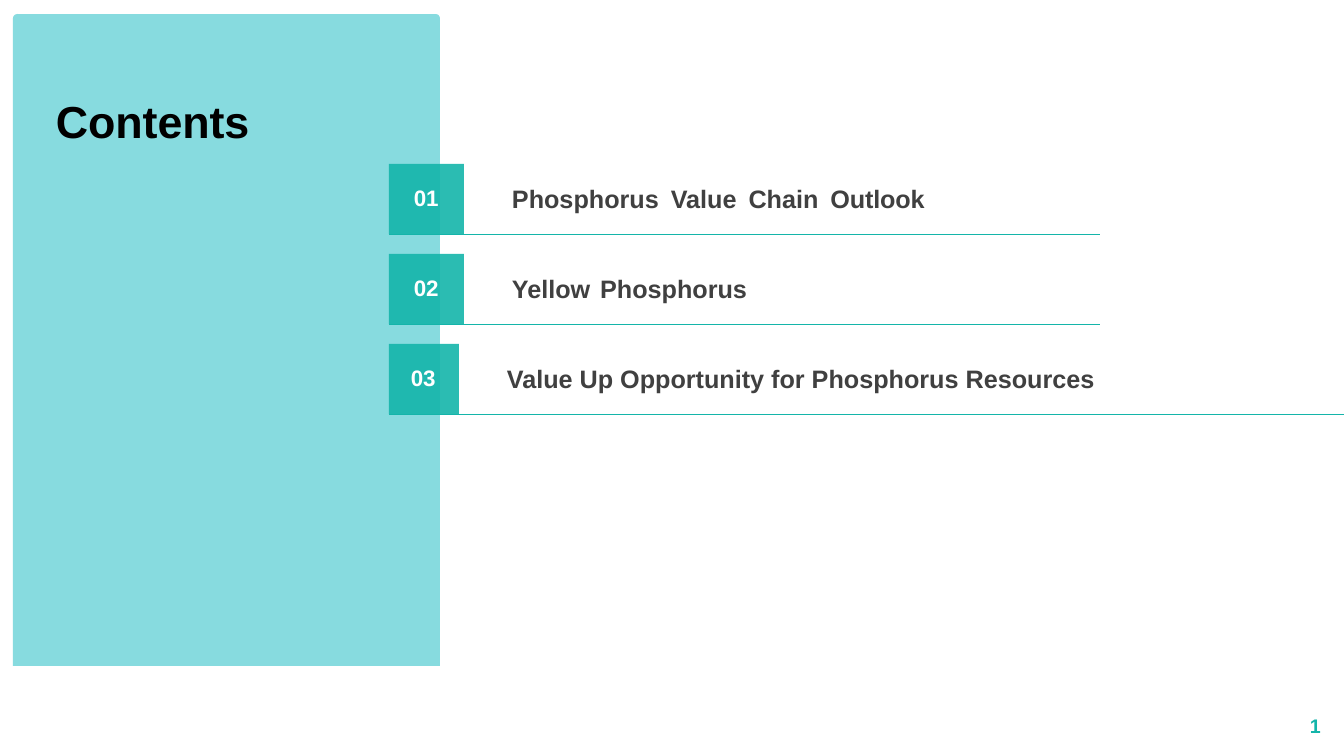
from lxml import etree
from pptx import Presentation
from pptx import util as u
from pptx.dml.color import RGBColor
from pptx.enum import shapes, text
from pptx.oxml.ns import qn

PX = 914400 / 100.8
TEAL = "14B5AA"


def color(value):
    return RGBColor.from_string(value)


def add_text(left, top, width, height, runs, size, fill, inset=1, indent=1):
    """Add a bold one-line text box; runs are (wording, letter spacing) pairs."""
    box = page.shapes.add_textbox(*(round(v * PX) for v in (left, top, width, height)))
    frame = box.text_frame
    frame.word_wrap = True
    frame.auto_size = text.MSO_AUTO_SIZE.SHAPE_TO_FIT_TEXT
    frame.margin_left = frame.margin_right = frame.margin_bottom = 0
    frame.margin_top = round(inset * PX)
    para = frame.paragraphs[0]
    para._p.get_or_add_pPr().set("marL", str(round(indent * PX)))
    for wording, spacing in runs:
        span = para.add_run()
        span.text = wording
        span.font.name = "Arial"
        span.font.size = u.Pt(size)
        span.font.bold = True
        span.font.color.rgb = color(fill)
        span._r.get_or_add_rPr().set("spc", str(spacing))
    return para


deck = Presentation()
deck.slide_width, deck.slide_height = round(1344 * PX), round(756 * PX)
page = deck.slides.add_slide(deck.slide_layouts[6])

# Side panel with rounded top corners
panel = page.shapes.add_shape(
    shapes.MSO_SHAPE.ROUND_2_SAME_RECTANGLE,
    *(round(v * PX) for v in (13, 14, 427, 652)))
panel.adjustments[0] = 0.01
panel.shadow.inherit = False
panel.fill.solid()
panel.fill.fore_color.rgb = color("87DBDF")
panel.line.fill.background()
add_text(55, 93, 198, 56, [("Contents", -10)], 32, "000000")

# Chapters: tile width, rule end, title width, title runs
chapters = [
    (75, 1100, 423, [("Phosphorus", 0), (" ", 350), ("Value", 0), (" ", 350),
                     ("Chain", 0), (" ", 350), ("Outlook", -10)]),
    (75, 1100, 247, [("Yellow", 0), (" ", 200), ("Phosphorus", 0)]),
    (70, 1344, 621, [("Value Up Opportunity for Phosphorus Resources", 0)]),
]
LEFT, TOP, PITCH, TILE = 389, 164, 90, 70
for row, (tile_width, rule_end, title_width, title) in enumerate(chapters):
    top = TOP + row * PITCH

    # Translucent number tile
    tile = page.shapes.add_shape(
        shapes.MSO_SHAPE.RECTANGLE,
        *(round(v * PX) for v in (LEFT, top, tile_width, TILE)))
    tile.shadow.inherit = False
    tile.fill.solid()
    tile.fill.fore_color.rgb = color(TEAL)
    tile.line.fill.background()
    shade = tile._element.spPr.find(qn("a:solidFill"))[0]
    etree.SubElement(shade, qn("a:alpha"), val="90000")

    # Rule under the chapter
    rule = page.shapes.add_connector(
        shapes.MSO_CONNECTOR.STRAIGHT,
        *(round(v * PX) for v in (LEFT, top + TILE, rule_end, top + TILE)))
    rule.line.color.rgb = color(TEAL)
    rule.line.width = u.Pt(0.5)
    etree.SubElement(rule._element.spPr, qn("a:effectLst"))

    # Number centred in its tile, title at a fixed gap after it
    add_text(LEFT + (tile_width - 27) // 2, top + 19, 27, 28,
             [(f"{row + 1:02}", -20)], 16, "FFFFFF")
    add_text(LEFT + tile_width + 47, top + 18, title_width, 33, title, 18, "404040")

# Page number
number = add_text(1295, 714, 31, 22, [("1", -50)], 14, TEAL, inset=0, indent=15)
number.line_spacing = u.Pt(16.5)

deck.save("out.pptx")
